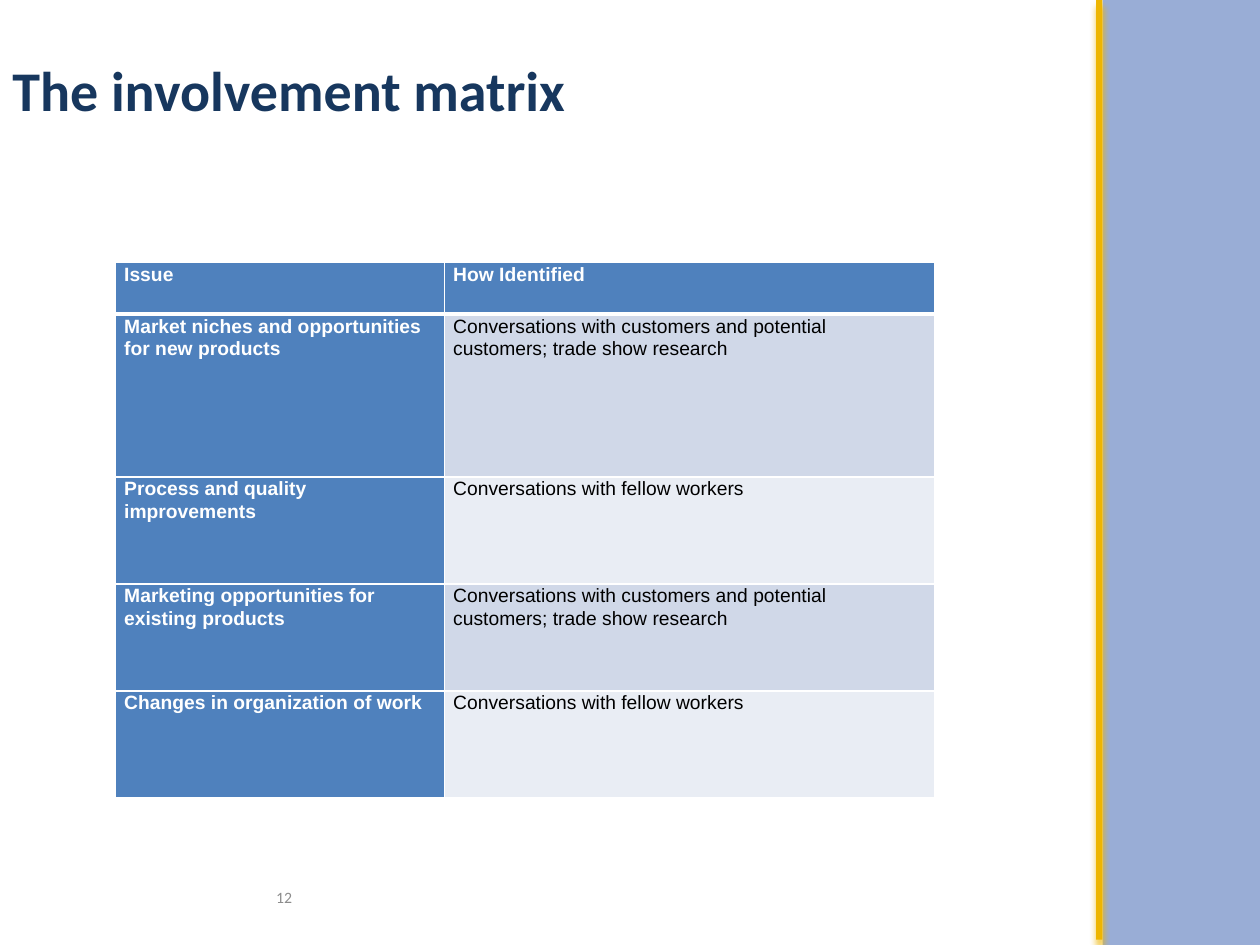
"""Build the involvement matrix slide."""
from lxml import etree
from pptx import Presentation
from pptx import util as u
from pptx.dml.color import RGBColor
from pptx.enum import shapes, text
from pptx.oxml.ns import qn

WHITE = RGBColor(0xFF, 0xFF, 0xFF)
BLACK = RGBColor(0x00, 0x00, 0x00)
NAVY = RGBColor(0x17, 0x37, 0x5E)
GREY = RGBColor(0x8C, 0x8C, 0x8C)
BAND_BLUE = RGBColor(0x00, 0x33, 0x99)
GOLD = RGBColor(0xEE, 0xB5, 0x00)
HEADER_BLUE = RGBColor(0x4F, 0x81, 0xBD)
STRIPES = (RGBColor(0xD0, 0xD8, 0xE8), RGBColor(0xE9, 0xED, 0xF4))

CUSTOMERS = "Conversations with customers and potential customers; trade show research"
WORKERS = "Conversations with fellow workers"
MATRIX = [
    ("Issue", "How Identified"),
    ("Market niches and opportunities for new products", CUSTOMERS),
    ("Process and quality improvements", WORKERS),
    ("Marketing opportunities for existing products", CUSTOMERS),
    ("Changes in organization of work", WORKERS),
]
COLUMN_WIDTHS = (188, 280)
ROW_HEIGHTS = (29.5, 93, 61.2, 61.2, 61.2)


def points(*lengths):
    """Convert lengths in points to slide units."""
    return [u.Pt(length) for length in lengths]


def add_color(parent, color):
    """Append a solid RGB colour element to an XML parent."""
    return etree.SubElement(parent, qn("a:srgbClr"), val=str(color))


def style_text(frame, size, font, color, bold=False):
    """Format every run of a text frame."""
    for para in frame.paragraphs:
        for span in para.runs:
            span.font.size = u.Pt(size)
            span.font.name = font
            span.font.bold = bold
            span.font.color.rgb = color


def add_bar(page, place, color):
    """Add a plain vertical bar without an outline."""
    bar = page.shapes.add_shape(shapes.MSO_SHAPE.RECTANGLE, *points(*place))
    bar.shadow.inherit = False
    bar.fill.solid()
    bar.fill.fore_color.rgb = color
    bar.line.fill.background()
    return bar


def set_opacity(bar, percent):
    """Make the solid fill of a bar partly transparent."""
    color = bar.fill._xPr.find(qn("a:solidFill")).find(qn("a:srgbClr"))
    etree.SubElement(color, qn("a:alpha"), val=str(percent * 1000))


def add_shadow(bar, color, blur, distance):
    """Give a bar a soft shadow that falls downwards."""
    effects = bar._element.spPr.find(qn("a:effectLst"))
    shadow = etree.SubElement(
        effects, qn("a:outerShdw"), blurRad=str(u.Pt(blur)),
        dist=str(u.Pt(distance)), dir="5400000", rotWithShape="0")
    add_color(shadow, color)


def add_text(page, place, words, size, color, align, bold=False):
    """Add a vertically centred text box."""
    box = page.shapes.add_textbox(*points(*place))
    frame = box.text_frame
    frame.word_wrap = True
    frame.vertical_anchor = text.MSO_ANCHOR.MIDDLE
    frame.text = words
    frame.paragraphs[0].alignment = align
    style_text(frame, size, "Calibri", color, bold)


def set_borders(cell, widths):
    """Draw white borders, given as widths by side, around a cell."""
    properties = cell._tc.get_or_add_tcPr()
    for index, (side, width) in enumerate(widths.items()):
        line = etree.Element(qn(f"a:ln{side}"), w=str(u.Pt(width)))
        add_color(etree.SubElement(line, qn("a:solidFill")), WHITE)
        properties.insert(index, line)


def fill_cell(cell, words, row, column):
    """Write and style one cell of the matrix."""
    heading = row == 0 or column == 0
    cell.margin_left = cell.margin_right = u.Pt(5)
    cell.margin_top = cell.margin_bottom = 0
    cell.fill.solid()
    cell.fill.fore_color.rgb = HEADER_BLUE if heading else STRIPES[(row - 1) % 2]
    cell.text_frame.text = words
    cell.text_frame.paragraphs[0].line_spacing = 1.07
    style_text(cell.text_frame, 11, "Arial", WHITE if heading else BLACK, heading)
    set_borders(cell, {"L": 1, "R": 1, "T": 3 if row == 1 else 1, "B": 3 if row == 0 else 1})


def add_matrix(page, left, top):
    """Add the involvement table."""
    size = points(left, top, sum(COLUMN_WIDTHS), sum(ROW_HEIGHTS))
    table = page.shapes.add_table(len(MATRIX), len(COLUMN_WIDTHS), *size).table
    table.first_col = True
    for column, width in zip(table.columns, COLUMN_WIDTHS):
        column.width = u.Pt(width)
    for row, height in zip(table.rows, ROW_HEIGHTS):
        row.height = u.Pt(height)
    for row, entries in enumerate(MATRIX):
        for column, words in enumerate(entries):
            fill_cell(table.cell(row, column), words, row, column)


def main():
    """Build and save the deck."""
    deck = Presentation()
    deck.slide_width, deck.slide_height = points(720, 540)
    page = deck.slides.add_slide(deck.slide_layouts[6])
    set_opacity(add_bar(page, (630, 0, 90, 540), BAND_BLUE), 40)
    add_shadow(add_bar(page, (626.4, 0, 3.6, 537), GOLD), GOLD, 4, 4)
    add_text(page, (12, 498, 162, 29), "12", 9, GREY, text.PP_ALIGN.RIGHT)
    add_text(page, (0, 0, 600, 102), "The involvement matrix", 32, NAVY,
             text.PP_ALIGN.LEFT, bold=True)
    add_matrix(page, 66, 150)
    deck.save("out.pptx")


if __name__ == "__main__":
    main()
